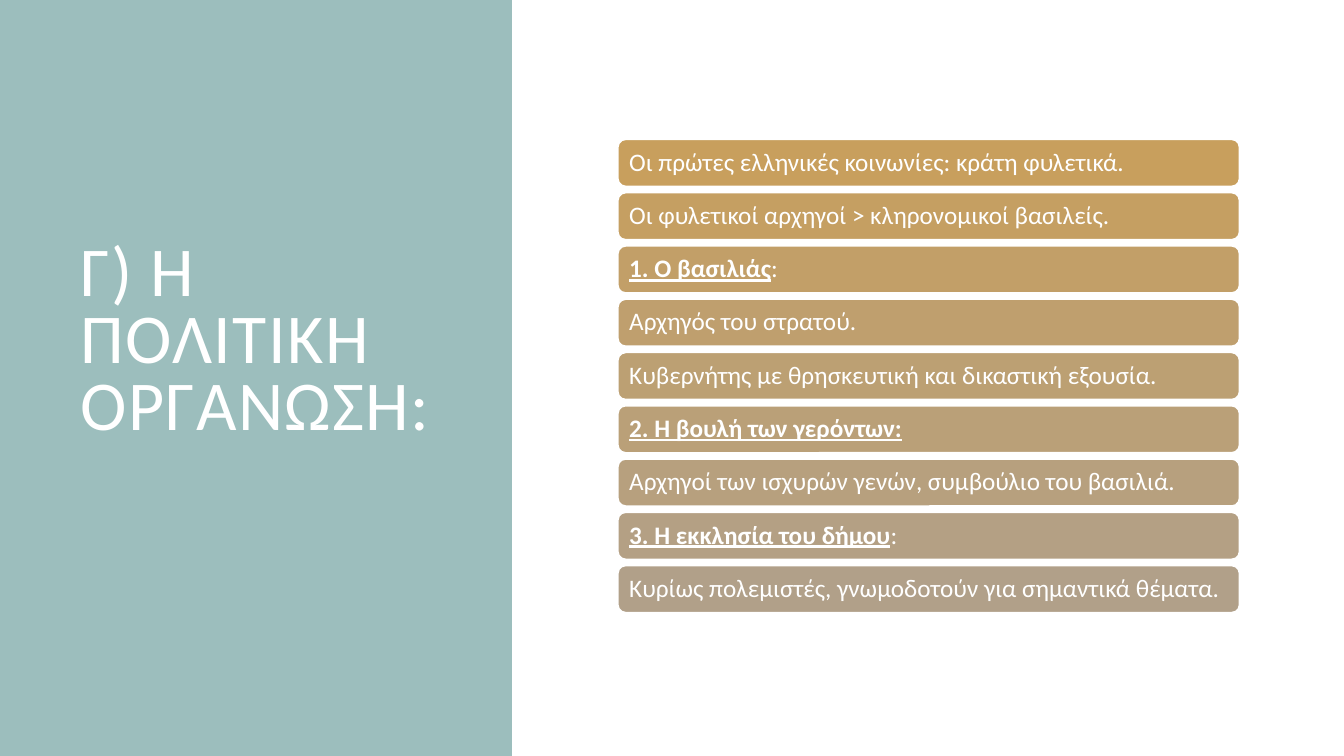
"""Builds a slide on political organisation: a title panel and a list of bars."""
from pptx import Presentation
from pptx.dml.color import RGBColor
from pptx.enum.shapes import MSO_SHAPE as Shape
from pptx.enum.text import MSO_ANCHOR as Anchor, MSO_AUTO_SIZE as AutoSize, PP_ALIGN as Align
from pptx.util import Cm, Pt

COLORS = {"panel": "9CBEBD", "white": "FFFFFF", "first_bar": "C89F5D", "last_bar": "B1A089"}
FONT = "Calibri"
BAR_LEFT, BAR_WIDTH, BAR_HEIGHT = 15.57, 15.67, 1.19
FIRST_TOP, LAST_TOP = 3.51, 14.25

# Each bar holds (heading, plain text); headings are bold and underlined.
BARS = [
    ("", "Οι πρώτες ελληνικές κοινωνίες: κράτη φυλετικά."),
    ("", "Οι φυλετικοί αρχηγοί > κληρονομικοί βασιλείς."),
    ("1. Ο βασιλιάς", ":"),
    ("", "Αρχηγός του στρατού."),
    ("", "Κυβερνήτης με θρησκευτική και δικαστική εξουσία."),
    ("2. Η βουλή των γερόντων:", ""),
    ("", "Αρχηγοί των ισχυρών γενών, συμβούλιο του βασιλιά."),
    ("3. Η εκκλησία του δήμου", ":"),
    ("", "Κυρίως πολεμιστές, γνωμοδοτούν για σημαντικά θέματα."),
]


def rgb(name):
    return RGBColor.from_string(COLORS[name])


def blend(share):
    start, end = rgb("first_bar"), rgb("last_bar")
    return RGBColor(*(round(a + (b - a) * share) for a, b in zip(start, end)))


def add_span(para, text, size, heading=False):
    span = para.add_run()
    span.text = text
    span.font.name = FONT
    span.font.size = Pt(size)
    span.font.bold = heading
    span.font.underline = heading
    span.font.color.rgb = rgb("white")
    return span


def add_block(page, kind, left, top, width, height, color):
    block = page.shapes.add_shape(kind, Cm(left), Cm(top), Cm(width), Cm(height))
    block.shadow.inherit = False
    block.fill.solid()
    block.fill.fore_color.rgb = color
    block.line.fill.background()
    return block


def add_bar(page, top, color, heading, plain):
    bar = add_block(page, Shape.ROUNDED_RECTANGLE, BAR_LEFT, top, BAR_WIDTH, BAR_HEIGHT, color)
    bar.line.color.rgb = rgb("white")
    bar.line.width = Pt(1.25)
    frame = bar.text_frame
    frame.word_wrap = True
    frame.vertical_anchor = Anchor.MIDDLE
    frame.margin_left = frame.margin_right = Cm(0.23)
    frame.margin_top = frame.margin_bottom = Cm(0.1)
    para = frame.paragraphs[0]
    para.alignment = Align.LEFT
    para.line_spacing = 0.9
    if heading:
        add_span(para, heading, 18, heading=True)
    if plain:
        add_span(para, plain, 18)


def set_title(page, text):
    title = page.shapes.title
    title.left, title.top, title.width, title.height = Cm(1.78), Cm(1.78), Cm(9.5), Cm(15.47)
    frame = title.text_frame
    frame.word_wrap = True
    frame.auto_size = AutoSize.NONE
    frame.vertical_anchor = Anchor.MIDDLE
    frame.margin_bottom = Cm(1.85)
    para = frame.paragraphs[0]
    para.alignment = Align.LEFT
    para.line_spacing = 0.8
    span = add_span(para, text, 50)
    span.font._element.set("spc", "100")


def main():
    deck = Presentation()
    deck.slide_width, deck.slide_height = Cm(33.87), Cm(19.05)
    page = deck.slides.add_slide(deck.slide_layouts[5])
    panel = add_block(page, Shape.RECTANGLE, 0, 0, 12.9, 19.05, rgb("panel"))
    page.shapes.title._element.addprevious(panel._element)
    set_title(page, "Γ) Η ΠΟΛΙΤΙΚΗ ΟΡΓΑΝΩΣΗ:")
    for index, (heading, plain) in enumerate(BARS):
        share = index / (len(BARS) - 1)
        top = FIRST_TOP + (LAST_TOP - FIRST_TOP) * share
        add_bar(page, top, blend(share), heading, plain)
    deck.save("out.pptx")


if __name__ == "__main__":
    main()
